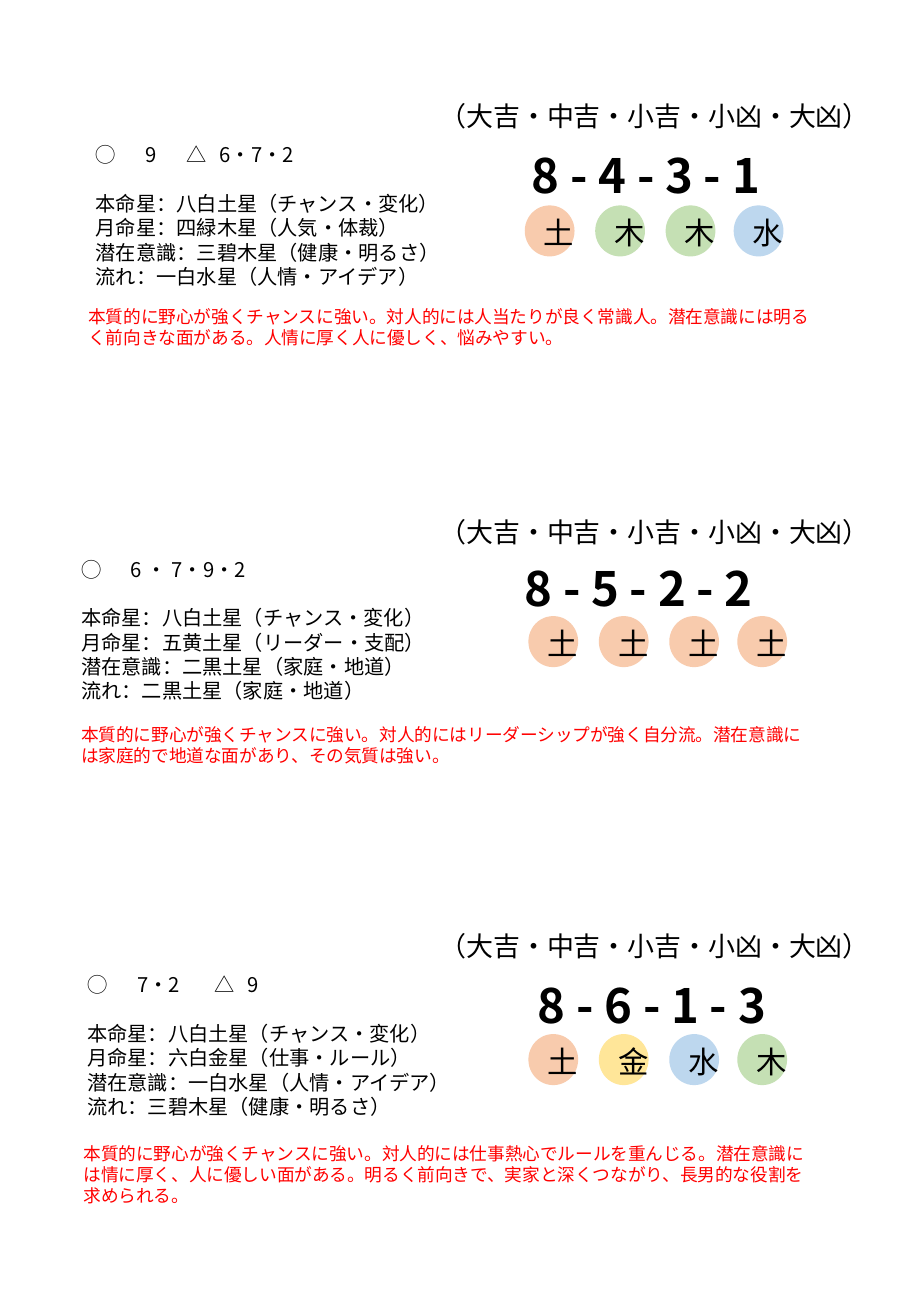
import dataclasses

import pptx
import pptx.dml.color
import pptx.enum.shapes
import pptx.enum.text
import pptx.oxml
import pptx.oxml.ns
import pptx.util

Inches = pptx.util.Inches
Pt = pptx.util.Pt
RGBColor = pptx.dml.color.RGBColor

FONT = "Noto Sans CJK JP"
BLACK = RGBColor(0x00, 0x00, 0x00)
RED = RGBColor(0xFF, 0x00, 0x00)
GREEN = RGBColor(0xC5, 0xE0, 0xB4)
ORANGE = RGBColor(0xF8, 0xCB, 0xAD)
BLUE = RGBColor(0xBD, 0xD7, 0xEE)
YELLOW = RGBColor(0xFF, 0xE6, 0x99)
ELEMENT_COLOURS = {"木": GREEN, "土": ORANGE, "水": BLUE, "金": YELLOW}

LINE_HEIGHT = 1.2
TOP_SHIFT = 0.09
CAPTION = "（大吉・中吉・小吉・小凶・大凶）"
CAPTION_FORMAT = {"size": Pt(16)}
STARS_FORMAT = {"size": Pt(12)}
NUMBERS_FORMAT = {"size": Pt(28), "bold": True}
ELEMENT_FORMAT = {"size": Pt(18)}
MESSAGE_FORMAT = {"size": Pt(10.5)}
CIRCLE_OFFSETS = (0, 0.58, 1.16, 1.72)


@dataclasses.dataclass
class Reading:
    """One fortune reading; each place is (left, drop below the block's top)."""
    top: float
    luck: str
    tabs: tuple
    stars: tuple
    stars_place: tuple
    stars_width: float
    numbers: str
    numbers_place: tuple
    elements: str
    circles_place: tuple
    message: str
    message_place: tuple
    message_height: float


READINGS = (
    Reading(
        0.75, "◯\t9\t△\t6・7・2", (0.41, 0.75, 1.02),
        ("本命星：八白土星（チャンス・変化）", "月命星：四緑木星（人気・体裁）",
         "潜在意識：三碧木星（健康・明るさ）", "流れ：一白水星（人情・アイデア）"),
        (0.69, 0.36), 3.14, "8 - 4 - 3 - 1", (4.28, 0.37), "土木木水", (4.32, 0.94),
        "本質的に野心が強くチャンスに強い。対人的には人当たりが良く常識人。"
        "潜在意識には明るく前向きな面がある。人情に厚く人に優しく、悩みやすい。",
        (0.63, 1.7), 0.45),
    Reading(
        4.17, "◯\t6 ・ 7・9・2", (0.41,),
        ("本命星：八白土星（チャンス・変化）", "月命星：五黄土星（リーダー・支配）",
         "潜在意識：二黒土星（家庭・地道）", "流れ：二黒土星（家庭・地道）"),
        (0.57, 0.35), 3.12, "8 - 5 - 2 - 2", (4.22, 0.35), "土土土土", (4.35, 0.9),
        "本質的に野心が強くチャンスに強い。対人的にはリーダーシップが強く自分流。"
        "潜在意識には家庭的で地道な面があり、その気質は強い。",
        (0.57, 1.72), 0.45),
    Reading(
        7.58, "◯\t7・2\t△\t9", (0.41, 1.05, 1.32),
        ("本命星：八白土星（チャンス・変化）", "月命星：六白金星（仕事・ルール）",
         "潜在意識：一白水星（人情・アイデア）", "流れ：三碧木星（健康・明るさ）"),
        (0.62, 0.36), 3.56, "8 - 6 - 1 - 3", (4.33, 0.37), "土金水木", (4.35, 0.93),
        "本質的に野心が強くチャンスに強い。対人的には仕事熱心でルールを重んじる。"
        "潜在意識には情に厚く、人に優しい面がある。明るく前向きで、"
        "実家と深くつながり、長男的な役割を求められる。",
        (0.59, 1.76), 0.63),
)


def write_lines(frame, lines, text_format, colour=BLACK):
    size = text_format["size"]
    frame.margin_top = Inches(0.05) + int(size * TOP_SHIFT)
    for index, line in enumerate(lines):
        para = frame.paragraphs[0] if index == 0 else frame.add_paragraph()
        para.line_spacing = Pt(size.pt * LINE_HEIGHT)
        span = para.add_run()
        span.text = line
        for name, value in {"name": FONT, **text_format}.items():
            setattr(span.font, name, value)
        span.font.color.rgb = colour
        east_asian = pptx.oxml.parse_xml(
            f'<a:ea {pptx.oxml.ns.nsdecls("a")} typeface="{FONT}"/>')
        span.font._element.append(east_asian)


def add_text(shapes, place, lines, text_format, colour=BLACK, wrap=True):
    box = shapes.add_textbox(*map(Inches, place))
    frame = box.text_frame
    frame.word_wrap = wrap
    frame.auto_size = pptx.enum.text.MSO_AUTO_SIZE.SHAPE_TO_FIT_TEXT
    write_lines(frame, lines, text_format, colour)
    return frame


def set_tabs(para, stops):
    tabs = "".join(f'<a:tab pos="{Inches(stop)}" algn="l"/>' for stop in stops)
    para._p.get_or_add_pPr().append(pptx.oxml.parse_xml(
        f'<a:tabLst {pptx.oxml.ns.nsdecls("a")}>{tabs}</a:tabLst>'))


def add_element_circle(shapes, left, top, element):
    circle = shapes.add_shape(pptx.enum.shapes.MSO_SHAPE.OVAL, Inches(left),
                              Inches(top), Inches(0.41), Inches(0.42))
    circle.shadow.inherit = False
    circle.fill.solid()
    circle.fill.fore_color.rgb = ELEMENT_COLOURS[element]
    circle.line.fill.background()
    frame = circle.text_frame
    frame.word_wrap = True
    frame.vertical_anchor = pptx.enum.text.MSO_ANCHOR.MIDDLE
    write_lines(frame, [element], ELEMENT_FORMAT)
    frame.paragraphs[0].alignment = pptx.enum.text.PP_ALIGN.CENTER


def add_reading(page, reading):
    shapes = page.shapes.add_group_shape().shapes

    def area(place, width, height):
        left, drop = place
        return left, reading.top + drop, width, height

    add_text(shapes, area((3.52, 0), 3.79, 0.37), [CAPTION], CAPTION_FORMAT, wrap=False)
    stars = add_text(shapes, area(reading.stars_place, reading.stars_width, 1.31),
                     [reading.luck, *reading.stars], STARS_FORMAT)
    set_tabs(stars.paragraphs[0], reading.tabs)
    stars.paragraphs[1].space_before = Pt(12 * LINE_HEIGHT)
    add_text(shapes, area(reading.numbers_place, 2.52, 0.57),
             [reading.numbers], NUMBERS_FORMAT)
    left, drop = reading.circles_place
    for offset, element in zip(CIRCLE_OFFSETS, reading.elements):
        add_element_circle(shapes, left + offset, reading.top + drop, element)
    add_text(shapes, area(reading.message_place, 6.26, reading.message_height),
             [reading.message], MESSAGE_FORMAT, RED)


def main():
    deck = pptx.Presentation()
    deck.slide_width = Inches(7.5)
    deck.slide_height = Inches(10.83)
    page = deck.slides.add_slide(deck.slide_layouts[6])
    for reading in READINGS:
        add_reading(page, reading)
    deck.save("out.pptx")


if __name__ == "__main__":
    main()
